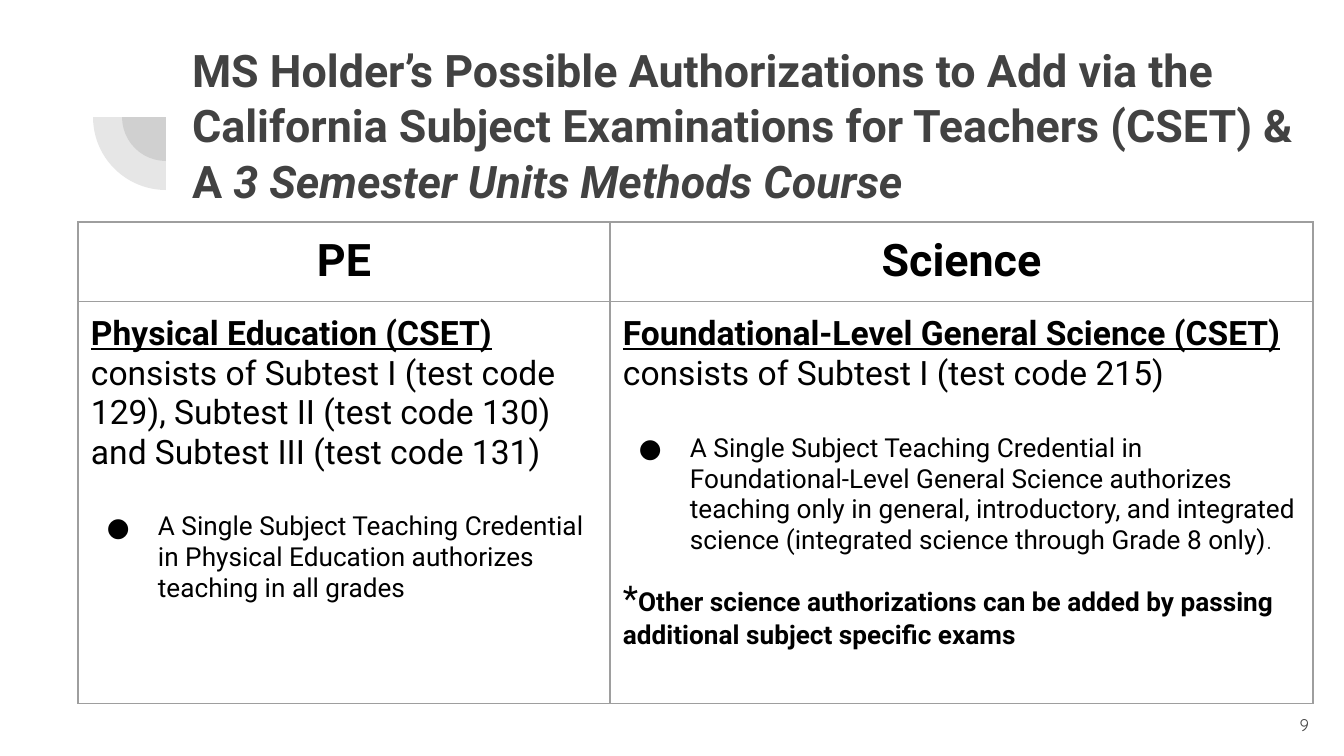
from dataclasses import dataclass

from lxml.etree import SubElement
from pptx import Presentation
from pptx.dml.color import RGBColor
from pptx.enum.shapes import MSO_SHAPE
from pptx.enum.text import MSO_ANCHOR, MSO_AUTO_SIZE, PP_ALIGN
from pptx.oxml.ns import qn
from pptx.util import Emu, Pt

EMU_PER_PX = 914400 / 134.4
INSET = 13
GREY = RGBColor(0x42, 0x42, 0x42)
DARK = RGBColor(0x33, 0x33, 0x33)
BLACK = RGBColor(0, 0, 0)
WHITE = RGBColor(0xFF, 0xFF, 0xFF)
BORDER = RGBColor(0x9E, 0x9E, 0x9E)


@dataclass
class Span:
    text: str
    size: float
    bold: bool = False
    italic: bool = False
    underline: bool = False
    color: RGBColor = BLACK
    font: str = "Roboto"


@dataclass
class Para:
    spans: list
    align: PP_ALIGN = PP_ALIGN.LEFT
    bullet: bool = False
    space_before: float = 0
    line_spacing: float = 1.0


TITLE = Para([
    Span("MS Holder’s Possible Authorizations to Add via the California Subject "
         "Examinations for Teachers (CSET) & A ", 24, bold=True, color=GREY),
    Span("3 Semester Units Methods Course", 24, bold=True, italic=True, color=GREY),
], line_spacing=1.03)

HEADINGS = ["PE", "Science"]

PE_PARAS = [
    Para([
        Span("Physical Education (CSET) ", 18, bold=True, underline=True),
        Span("consists of Subtest I (test code 129), Subtest II (test code 130) "
             "and Subtest III (test code 131)", 18),
    ]),
    Para([Span("A Single Subject Teaching Credential in Physical Education "
               "authorizes teaching in all grades", 14)],
         bullet=True, space_before=21),
]

SCIENCE_PARAS = [
    Para([
        Span("Foundational-Level General Science (CSET)", 18, bold=True, underline=True),
        Span(" consists of Subtest I (test code 215)", 18),
    ]),
    Para([
        Span("A Single Subject Teaching Credential in Foundational-Level General "
             "Science authorizes teaching only in general, introductory, and "
             "integrated science (integrated science through Grade 8 only)", 14),
        Span(".", 10.5, color=DARK, font="Arial"),
    ], bullet=True, space_before=21),
    Para([
        Span("*", 19),
        Span("Other science authorizations can be added by passing additional "
             "subject specific exams", 14, bold=True),
    ], space_before=12),
]


def px(length):
    return Emu(round(length * EMU_PER_PX))


def place(shape, left, top, width, height):
    shape.left, shape.top = px(left), px(top)
    shape.width, shape.height = px(width), px(height)


def set_insets(holder):
    holder.margin_left = holder.margin_right = px(INSET)
    holder.margin_top = holder.margin_bottom = px(INSET)


def add_bullet(paragraph):
    properties = paragraph._p.get_or_add_pPr()
    properties.set("marL", str(px(67)))
    properties.set("indent", str(px(-51)))
    SubElement(properties, qn("a:buFont"), typeface="Roboto")
    SubElement(properties, qn("a:buChar"), char="●")


def write_paras(frame, paras):
    for index, para in enumerate(paras):
        paragraph = frame.add_paragraph() if index else frame.paragraphs[0]
        paragraph.alignment = para.align
        paragraph.space_before = Pt(para.space_before)
        paragraph.line_spacing = para.line_spacing
        if para.bullet:
            add_bullet(paragraph)
        for span in para.spans:
            run = paragraph.add_run()
            run.text = span.text
            run.font.name = span.font
            run.font.size = Pt(span.size)
            run.font.bold = span.bold
            run.font.italic = span.italic
            run.font.underline = span.underline
            run.font.color.rgb = span.color


def add_quarter(page, center_x, center_y, radius):
    quarter = page.shapes.add_shape(
        MSO_SHAPE.PIE, px(center_x - radius), px(center_y - radius),
        px(2 * radius), px(2 * radius))
    quarter.adjustments[0], quarter.adjustments[1] = 108, 162
    quarter.rotation = 270
    quarter.shadow.inherit = False
    quarter.line.fill.background()
    quarter.fill.solid()
    quarter.fill.fore_color.rgb = GREY
    color = quarter.fill._xPr.find(".//" + qn("a:srgbClr"))
    SubElement(color, qn("a:alpha"), val="13000")


def fill_title(page):
    title = page.shapes.title
    place(title, 179, 28, 1145, 177)
    frame = title.text_frame
    frame.word_wrap = True
    frame.auto_size = MSO_AUTO_SIZE.NONE
    frame.vertical_anchor = MSO_ANCHOR.TOP
    set_insets(frame)
    write_paras(frame, [TITLE])


def add_page_number(page):
    box = page.shapes.add_textbox(px(1242), px(696), px(80), px(58))
    frame = box.text_frame
    frame.word_wrap = True
    frame.vertical_anchor = MSO_ANCHOR.MIDDLE
    set_insets(frame)
    number = Span("9", 9, color=GREY, font="Quicksand")
    write_paras(frame, [Para([number], align=PP_ALIGN.RIGHT)])


def draw_borders(cell):
    properties = cell._tc.get_or_add_tcPr()
    for side in ("lnL", "lnR", "lnT", "lnB"):
        line = SubElement(properties, qn("a:" + side), w=str(Pt(0.75)))
        fill = SubElement(line, qn("a:solidFill"))
        SubElement(fill, qn("a:srgbClr"), val=str(BORDER))


def fill_cell(cell, paras):
    set_insets(cell)
    cell.vertical_anchor = MSO_ANCHOR.TOP
    draw_borders(cell)
    cell.fill.solid()
    cell.fill.fore_color.rgb = WHITE
    write_paras(cell.text_frame, paras)


def add_subject_table(page):
    widths, heights = [532, 703], [79, 402]
    table = page.shapes.add_table(
        2, 2, px(78), px(222), px(sum(widths)), px(sum(heights))).table
    table.first_row = table.horz_banding = False
    for column, width in zip(table.columns, widths):
        column.width = px(width)
    for row, height in zip(table.rows, heights):
        row.height = px(height)
    for index, (heading, body) in enumerate(zip(HEADINGS, [PE_PARAS, SCIENCE_PARAS])):
        heading_para = Para([Span(heading, 24, bold=True)], align=PP_ALIGN.CENTER)
        fill_cell(table.cell(0, index), [heading_para])
        fill_cell(table.cell(1, index), body)


def main():
    deck = Presentation()
    deck.slide_width, deck.slide_height = px(1344), px(756)
    page = deck.slides.add_slide(deck.slide_layouts[5])
    for radius in (44, 73):
        add_quarter(page, 166, 117, radius)
    fill_title(page)
    add_page_number(page)
    add_subject_table(page)
    deck.save("out.pptx")


if __name__ == "__main__":
    main()
